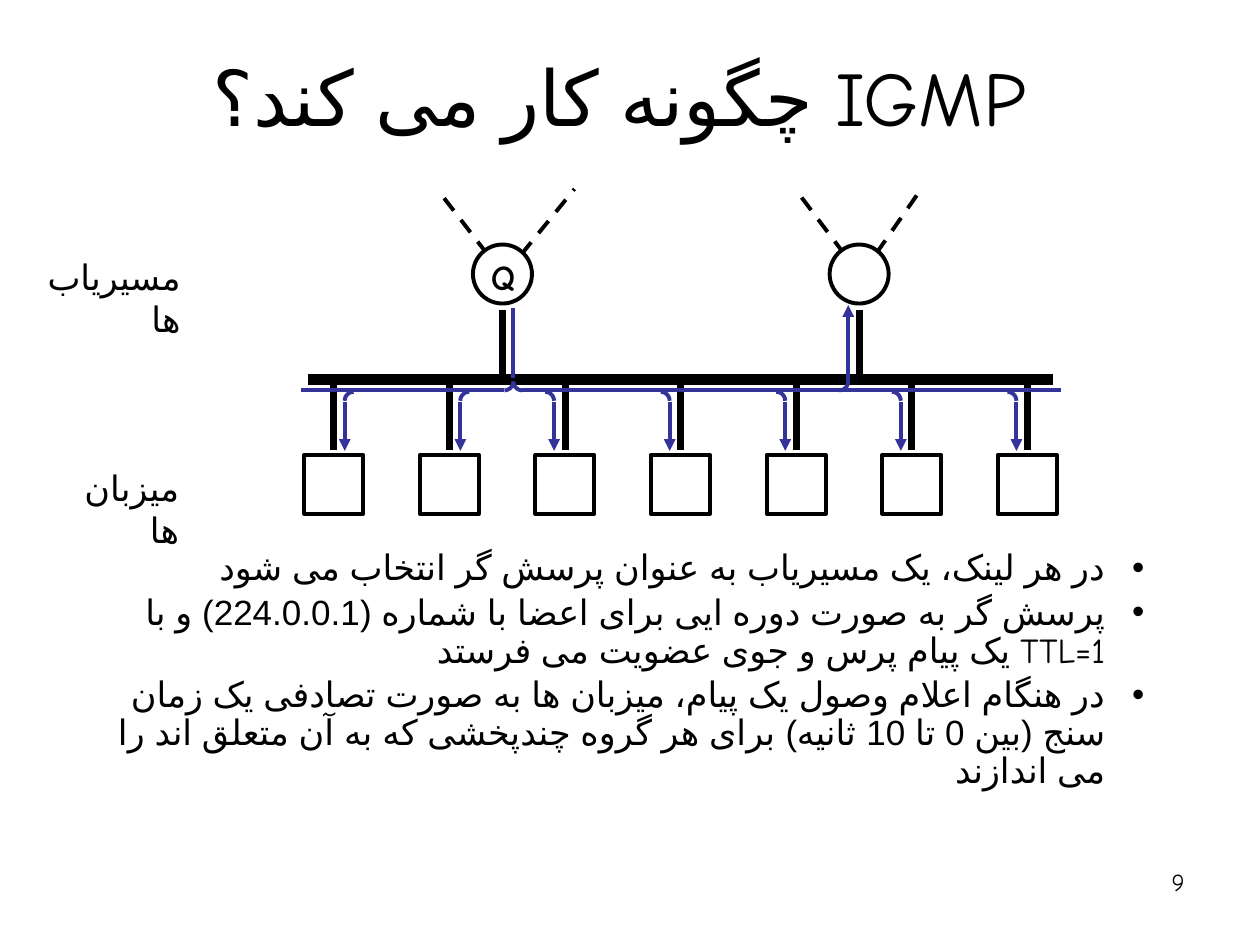
import math
import lxml.etree
import pptx
import pptx.dml.color
import pptx.enum.dml
import pptx.enum.shapes
import pptx.enum.text
import pptx.oxml.ns
import pptx.util
from pptx.util import Cm, Pt

BLACK = pptx.dml.color.RGBColor(0x00, 0x00, 0x00)
WHITE = pptx.dml.color.RGBColor(0xFF, 0xFF, 0xFF)
SIGNAL_BLUE = pptx.dml.color.RGBColor(0x33, 0x33, 0x99)
FONT = "Comic Neue"
PERSIAN_FONT = "Arial"
ALIGN = pptx.enum.text.PP_ALIGN
ANCHOR = pptx.enum.text.MSO_ANCHOR
SHAPE = pptx.enum.shapes.MSO_SHAPE

THIN = 2.25
NODE_SIZE = 1.19
ROUTER_TOP = 4.93
HOST_TOP = 9.17
HOST_COUNT = 7
FIRST_HOST_X = 6.73
HOST_PITCH = 2.33
BUS_Y = 7.65
SIGNAL_Y = 7.87
SIGNAL_OFFSET = 0.22
BEND_RADIUS = 0.18
QUERIER_X = 10.13
ROUTER_X = 17.32

BULLETS = [
    "در هر لینک، یک مسیریاب به عنوان پرسش گر انتخاب می شود",
    "پرسش گر به صورت دوره ایی برای اعضا با شماره (224.0.0.1) و با TTL=1 یک پیام پرس و جوی عضویت می فرستد",
    "در هنگام اعلام وصول یک پیام، میزبان ها به صورت تصادفی یک زمان سنج (بین 0 تا 10 ثانیه) "
    "برای هر گروه چندپخشی که به آن متعلق اند را می اندازند",
]


def add_child(parent, tag, **attributes):
    return lxml.etree.SubElement(parent, pptx.oxml.ns.qn(tag), **attributes)


def add_line(slide, start, end, width=THIN, color=BLACK, dashed=False, arrow=False):
    line = slide.shapes.add_connector(
        pptx.enum.shapes.MSO_CONNECTOR.STRAIGHT,
        Cm(start[0]), Cm(start[1]), Cm(end[0]), Cm(end[1]))
    line.line.color.rgb = color
    line.line.width = Pt(width)
    if dashed:
        line.line.dash_style = pptx.enum.dml.MSO_LINE.DASH
    if arrow:
        add_child(line.line._get_or_add_ln(), "a:tailEnd", type="triangle")
    add_child(line._element.spPr, "a:effectLst")


def add_bend(slide, center_x, center_y, start_angle):
    points = []
    for step in range(9):
        angle = math.radians(start_angle + 90 * step / 8)
        points.append((Cm(center_x + BEND_RADIUS * math.cos(angle)),
                       Cm(center_y + BEND_RADIUS * math.sin(angle))))
    builder = slide.shapes.build_freeform(*points[0])
    builder.add_line_segments(points[1:], close=False)
    bend = builder.convert_to_shape()
    bend.fill.background()
    bend.line.color.rgb = SIGNAL_BLUE
    bend.line.width = Pt(THIN)
    bend.shadow.inherit = False


def add_node(slide, outline, center_x, top):
    node = slide.shapes.add_shape(
        outline, Cm(center_x - NODE_SIZE / 2), Cm(top), Cm(NODE_SIZE), Cm(NODE_SIZE))
    node.fill.solid()
    node.fill.fore_color.rgb = WHITE
    node.line.color.rgb = BLACK
    node.line.width = Pt(THIN)
    node.shadow.inherit = False


def add_text(slide, box, paragraphs, size, align, rtl=False, bold=False,
             wrap=True, anchor=ANCHOR.TOP, bulleted=False):
    frame = slide.shapes.add_textbox(*[Cm(length) for length in box]).text_frame
    frame.word_wrap = wrap
    frame.vertical_anchor = anchor
    for index, words in enumerate(paragraphs):
        paragraph = frame.paragraphs[0] if index == 0 else frame.add_paragraph()
        paragraph.alignment = align
        properties = paragraph._p.get_or_add_pPr()
        if bulleted:
            paragraph.line_spacing = 0.9
            paragraph.space_before = Pt(size * 0.2)
            properties.set("marL", str(Cm(0.79)))
            properties.set("indent", str(-Cm(0.79)))
            add_child(properties, "a:buFont", typeface=PERSIAN_FONT)
            add_child(properties, "a:buChar", char="•")
        run = paragraph.add_run()
        run.text = words
        run.font.name = FONT
        run.font.size = Pt(size)
        run.font.bold = bold
        run.font.color.rgb = BLACK
        if rtl:
            properties.set("rtl", "1")
            letters = run._r.get_or_add_rPr()
            letters.set("lang", "fa-IR")
            add_child(letters, "a:cs", typeface=PERSIAN_FONT)


def add_uplinks(slide, foot_x, tops):
    for top_x in tops:
        add_line(slide, (foot_x, 5.56), (top_x, 3.81), dashed=True)


def add_network(slide, host_centers):
    add_uplinks(slide, 17.35, (18.57, 16.03))
    add_uplinks(slide, 10.16, (11.58, 8.81))
    add_line(slide, (6.2, BUS_Y), (21.23, BUS_Y), width=6)
    for router_x in (QUERIER_X, ROUTER_X):
        add_line(slide, (router_x, 6.25), (router_x, 7.59), width=4)
    for host_x in host_centers:
        add_line(slide, (host_x, 7.72), (host_x, 9.07), width=4)


def add_query_flow(slide, host_centers):
    query_x = QUERIER_X + SIGNAL_OFFSET
    left_x, right_x = query_x - BEND_RADIUS, query_x + BEND_RADIUS
    bend_y = SIGNAL_Y - BEND_RADIUS
    add_line(slide, (query_x, 6.2), (query_x, 7.62), color=SIGNAL_BLUE)
    add_bend(slide, left_x, bend_y, 0)
    add_bend(slide, right_x, bend_y, 90)
    add_line(slide, (left_x, SIGNAL_Y), (6.07, SIGNAL_Y), color=SIGNAL_BLUE)
    add_line(slide, (21.39, SIGNAL_Y), (right_x, SIGNAL_Y), color=SIGNAL_BLUE)
    for host_x in host_centers:
        side = 1 if host_x < QUERIER_X else -1
        drop_x = host_x + side * SIGNAL_OFFSET
        add_bend(slide, drop_x + side * BEND_RADIUS, 8.08, 180 if side == 1 else 270)
        add_line(slide, (drop_x, 8.1), (drop_x, 9.09), color=SIGNAL_BLUE, arrow=True)
    rise_x = ROUTER_X - SIGNAL_OFFSET
    add_bend(slide, rise_x - BEND_RADIUS, bend_y, 0)
    add_line(slide, (rise_x, 7.7), (rise_x, 6.15), color=SIGNAL_BLUE, arrow=True)


def main():
    deck = pptx.Presentation()
    deck.slide_width, deck.slide_height = Cm(25.4), Cm(19.05)
    slide = deck.slides.add_slide(deck.slide_layouts[6])
    host_centers = [FIRST_HOST_X + HOST_PITCH * index for index in range(HOST_COUNT)]

    add_text(slide, (18.21, 17.35, 5.92, 1.32), ["9"], 14, ALIGN.RIGHT)
    add_text(slide, (1.96, 0.76, 21.06, 2.34), ["IGMP چگونه کار می کند؟"], 44,
             ALIGN.CENTER, rtl=True, anchor=ANCHOR.MIDDLE)
    add_text(slide, (1.55, 10.97, 21.77, 7.04), BULLETS, 20, ALIGN.RIGHT,
             rtl=True, bulleted=True)

    add_network(slide, host_centers)
    add_query_flow(slide, host_centers)
    for router_x in (QUERIER_X, ROUTER_X):
        add_node(slide, SHAPE.OVAL, router_x, ROUTER_TOP)
    add_text(slide, (9.58, 5.03, 1.12, 1.09), ["Q"], 20, ALIGN.CENTER,
             bold=True, wrap=False)
    for host_x in host_centers:
        add_node(slide, SHAPE.RECTANGLE, host_x, HOST_TOP)

    add_text(slide, (0.66, 5.03, 3.23, 1.09), ["مسیریاب ها"], 20, ALIGN.RIGHT, rtl=True)
    add_text(slide, (1.17, 9.27, 2.69, 1.09), ["میزبان ها"], 20, ALIGN.RIGHT, rtl=True)
    deck.save("out.pptx")


if __name__ == "__main__":
    main()
